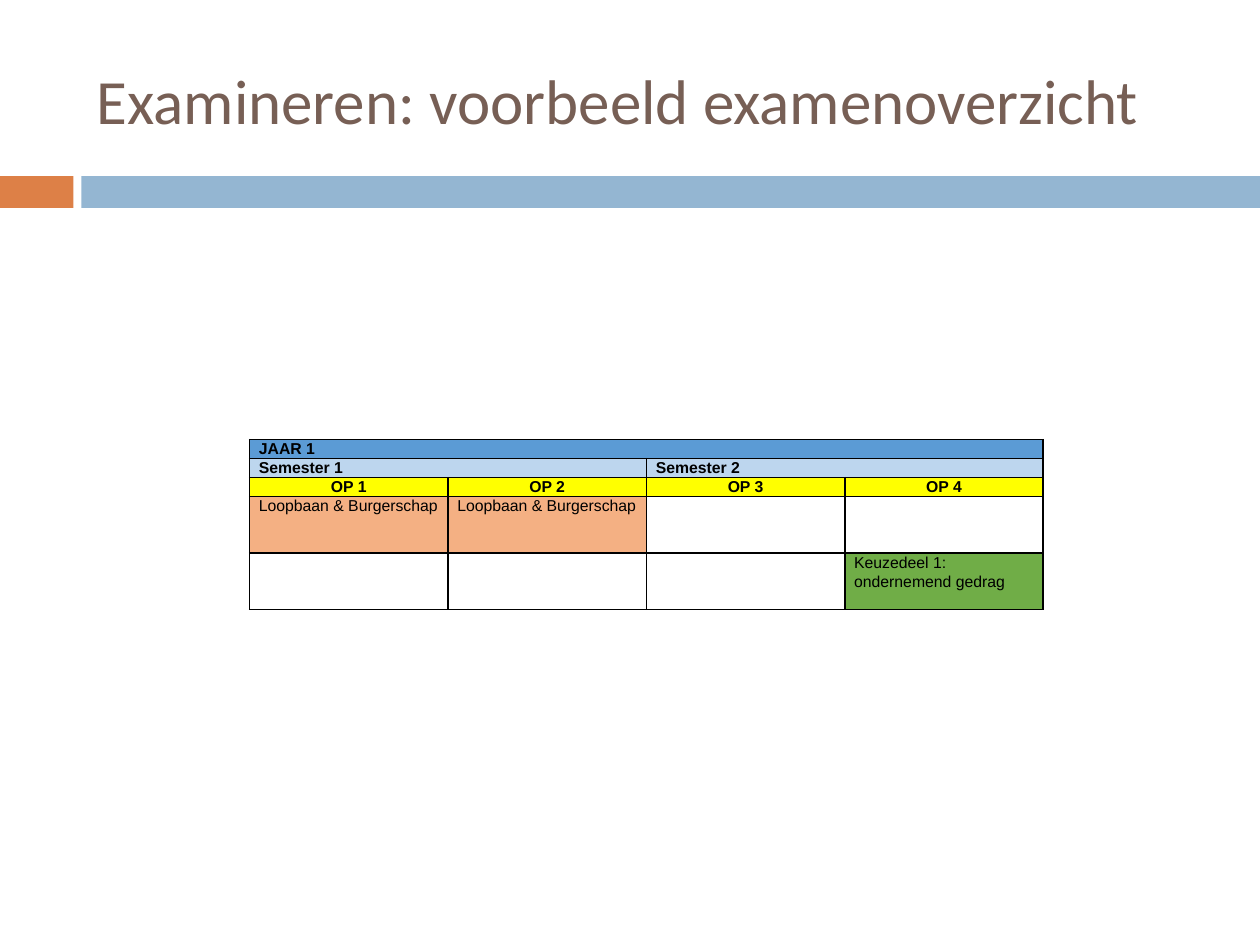
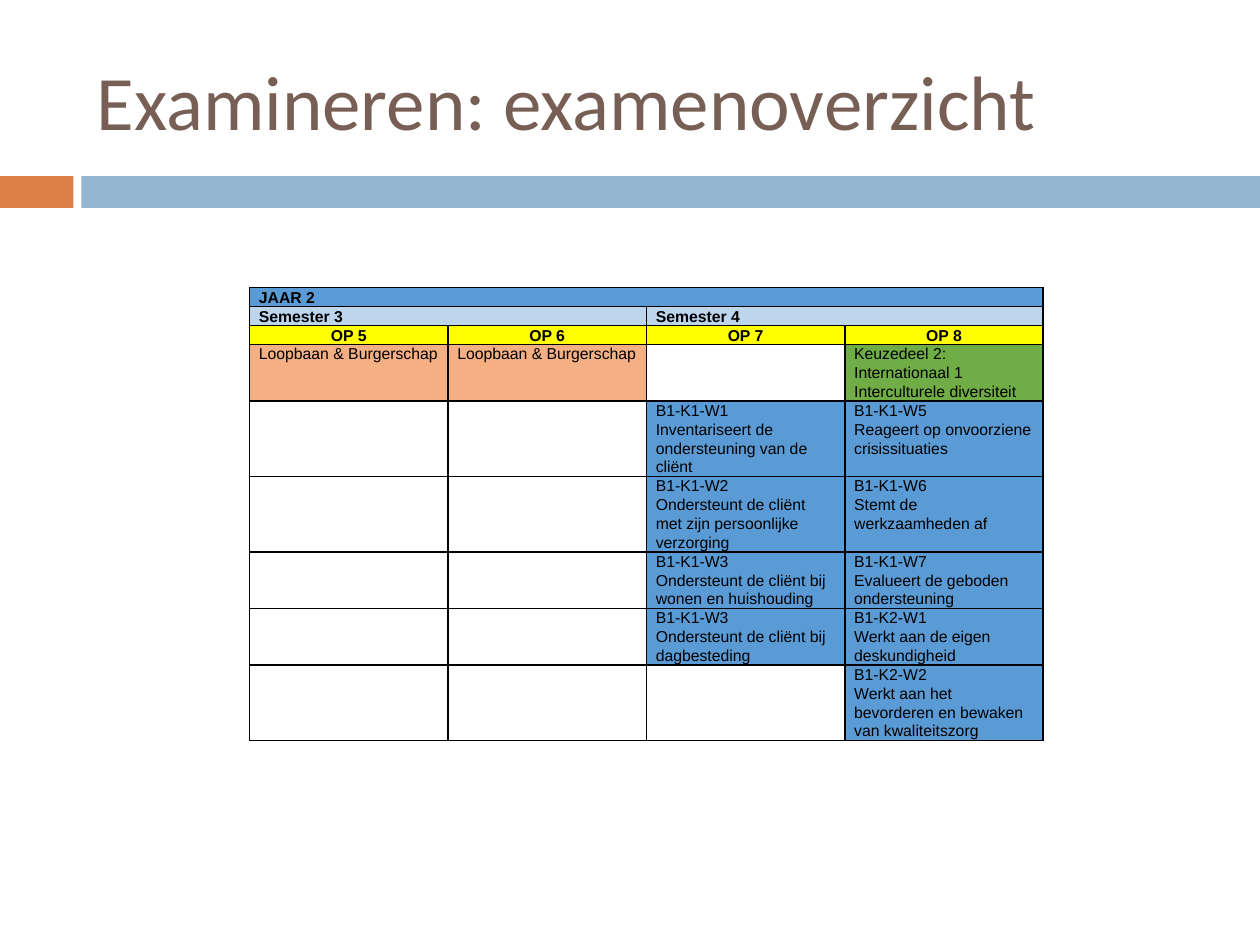
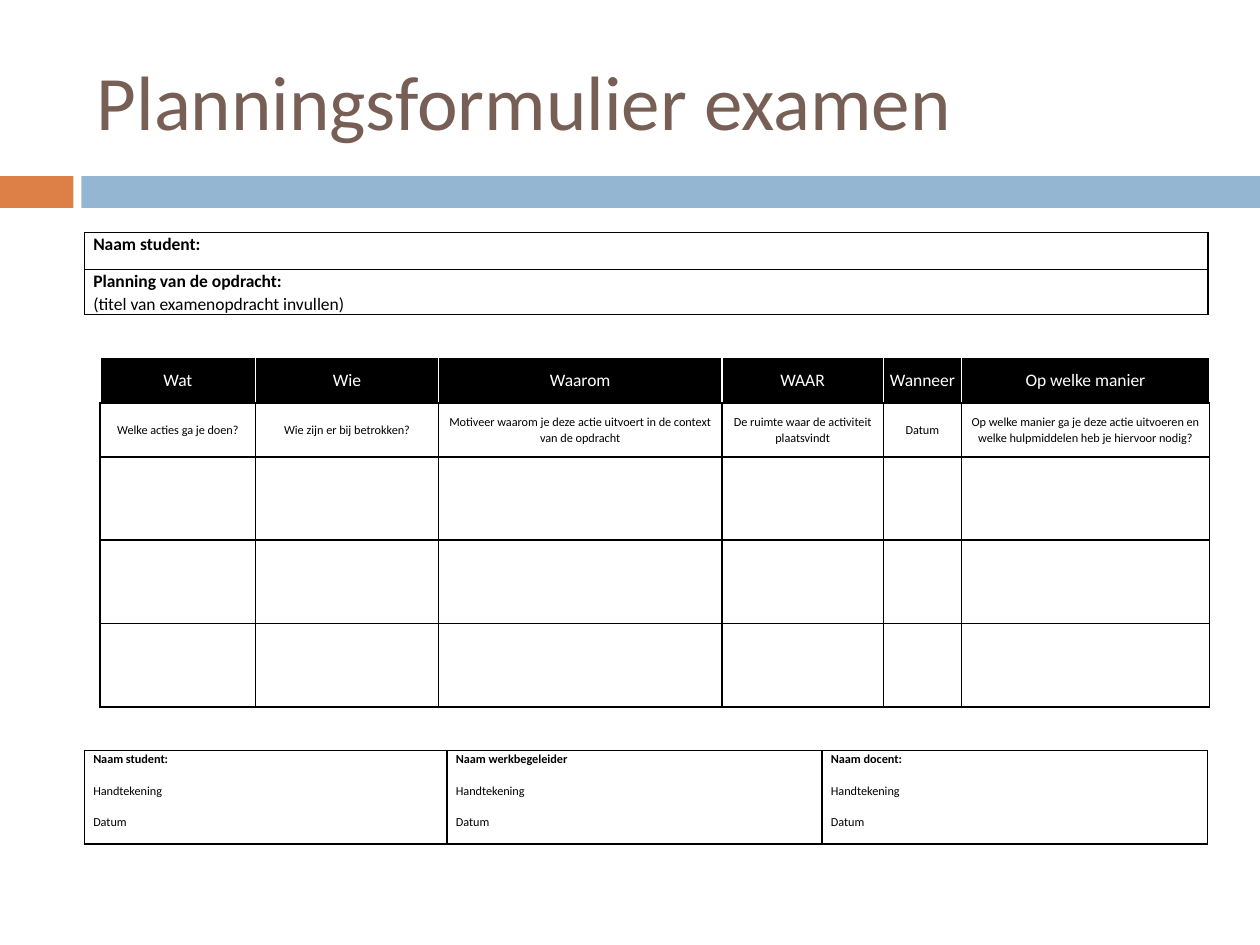
from lxml import etree
from pptx import Presentation
from pptx import util as u
from pptx.dml.color import RGBColor
from pptx.enum import shapes, text
from pptx.oxml.ns import qn

HUES = {
    "title": "775F55", "orange": "DD8047", "band": "94B6D2",
    "year": "5B9BD5", "term": "BDD6EE", "period": "FFFF00",
    "career": "F4B083", "choice": "70AD47",
    "black": "000000", "white": "FFFFFF",
}
LINE = 0.38  # height of one line of schedule text, in cm
LEFT = text.PP_ALIGN.LEFT
MID = text.PP_ALIGN.CENTER
TOP = text.MSO_ANCHOR.TOP
CORE = text.MSO_ANCHOR.MIDDLE


def hue(name):
    return RGBColor.from_string(HUES[name])


def put(obj, vals):
    for key, val in vals.items():
        setattr(obj, key, val)


# Shared parts: bands and title
def bar(slide, left, width, color):
    box = slide.shapes.add_shape(
        shapes.MSO_SHAPE.RECTANGLE, u.Cm(left), u.Cm(3.55), u.Cm(width), u.Cm(0.64))
    box.shadow.inherit = False
    box.fill.solid()
    box.fill.fore_color.rgb = hue(color)
    box.line.fill.background()


def start(deck, title, size):
    slide = deck.slides.add_slide(deck.slide_layouts[6])
    bar(slide, 0, 1.48, "orange")
    bar(slide, 1.64, 23.76, "band")
    box = slide.shapes.add_textbox(u.Cm(1.7), u.Cm(0.64), u.Cm(22.66), u.Cm(2.74))
    put(box.text_frame, {"word_wrap": True, "vertical_anchor": CORE})
    run = box.text_frame.paragraphs[0].add_run()
    run.text = title
    put(run.font, {"name": "Calibri", "size": u.Pt(size)})
    run.font.color.rgb = hue("title")
    return slide


# Table cells
def edge(cell, lines):
    """Draw the sides L, R, T, B; a side of None stays open."""
    props = cell._tc.get_or_add_tcPr()
    for side, color in zip("LRTB", lines):
        ln = etree.SubElement(props, qn("a:ln" + side), w="12700")
        if color is None:
            etree.SubElement(ln, qn("a:noFill"))
        else:
            fill = etree.SubElement(ln, qn("a:solidFill"))
            etree.SubElement(fill, qn("a:srgbClr"), val=HUES[color])


def write(cell, words, font="Calibri", size=7, ink="black", lead=False,
          align=LEFT, anchor=TOP, pad=0.18, gap=0, pitch=1.07, fill=None,
          lines=("black",) * 4):
    """Fill one cell; lead makes its first paragraph bold."""
    edge(cell, lines)
    put(cell, {"margin_left": u.Cm(pad), "margin_right": u.Cm(pad),
               "margin_top": 0, "margin_bottom": 0, "vertical_anchor": anchor})
    if fill:
        cell.fill.solid()
        cell.fill.fore_color.rgb = hue(fill)
    else:
        cell.fill.background()
    frame = cell.text_frame
    for i, part in enumerate(words.split("\n")):
        para = frame.paragraphs[0] if i == 0 else frame.add_paragraph()
        put(para, {"alignment": align, "line_spacing": pitch,
                   "space_before": u.Pt(gap if i else 0)})
        if part:
            run = para.add_run()
            run.text = part
            put(run.font, {"name": font, "size": u.Pt(size), "bold": lead and i == 0})
            run.font.color.rgb = hue(ink)
        else:
            end = etree.SubElement(para._p, qn("a:endParaRPr"), sz=str(size * 100))
            etree.SubElement(end, qn("a:latin"), typeface=font)


def grid(slide, left, top, cols, rows):
    frame = slide.shapes.add_table(
        len(rows), len(cols), u.Cm(left), u.Cm(top), u.Cm(sum(cols)), u.Cm(sum(rows)))
    table = frame.table
    put(table, {"first_row": False, "horz_banding": False})
    for col, width in zip(table.columns, cols):
        col.width = u.Cm(width)
    for row, height in zip(table.rows, rows):
        row.height = u.Cm(height)
    return table


# Exam schedule of one year
def plan(slide, left, top, year, body):
    """body holds (lines high, four cells), a cell being (text, fill) or None."""
    first = 4 * year - 3
    term = 2 * year - 1
    # Each heading row: texts, fill, alignment, columns per heading
    heads = [
        ([f"JAAR {year}", "", "", ""], "year", LEFT, 4),
        ([f"Semester {term}", "", f"Semester {term + 1}", ""], "term", LEFT, 2),
        ([f"OP {first + i}" for i in range(4)], "period", MID, 1),
    ]
    highs = [1] * len(heads) + [high for high, _ in body]
    table = grid(slide, left, top, [4] * 4, [LINE * high for high in highs])
    fmt = {"font": "Arial", "size": 9, "pad": 0.19, "pitch": u.Pt(10.75)}
    for r, (words, fill, align, span) in enumerate(heads):
        for c, word in enumerate(words):
            west = "black" if c % span == 0 else None
            east = "black" if (c + 1) % span == 0 else None
            write(table.cell(r, c), word, fill=fill, align=align, lead=True,
                  lines=(west, east, "black", "black"), **fmt)
    for r, (_, cells) in enumerate(body, len(heads)):
        for c, item in enumerate(cells):
            word, fill = item or ("", None)
            write(table.cell(r, c), word, fill=fill, **fmt)


# Planning form: name block, action table, signatures
def names(slide, left, top):
    table = grid(slide, left, top, [22.65], [0.74, 0.91])
    for r, words in enumerate([
            "Naam student:",
            "Planning van de opdracht:\n(titel van examenopdracht invullen)"]):
        write(table.cell(r, 0), words, size=10, lead=True)


def acts(slide, left, top):
    heads = [
        ("Wat", "Welke acties ga je doen?"),
        ("Wie", "Wie zijn er bij betrokken?"),
        ("Waarom", "Motiveer waarom je deze actie uitvoert in de context van de opdracht"),
        ("WAAR", "De ruimte waar de activiteit plaatsvindt"),
        ("Wanneer", "Datum"),
        ("Op welke manier", "Op welke manier ga je deze actie uitvoeren en "
                            "welke hulpmiddelen heb je hiervoor nodig?"),
    ]
    rows = [0.91, 1.09] + [1.68] * 3
    table = grid(slide, left, top, [0.32, 3.13, 3.69, 5.71, 3.26, 1.57, 5], rows)
    fmt = {"align": MID, "anchor": CORE, "pad": 0.1}
    for r in range(len(rows)):
        # Open margin column
        side = "black" if r else "white"
        write(table.cell(r, 0), "", pad=0, lines=(None, side, None, None))
        for c, pair in enumerate(heads, 1):
            cell = table.cell(r, c)
            if r == 0:
                write(cell, pair[0], size=10, ink="white", fill="black",
                      lines=("white", "white", "white", "black"), **fmt)
            else:
                write(cell, pair[1] if r == 1 else "", **fmt)


def signs(slide, left, top):
    table = grid(slide, left, top, [7.31, 7.56, 7.77], [1.88])
    for c, who in enumerate(["Naam student:", "Naam werkbegeleider", "Naam docent:"]):
        write(table.cell(0, c), who + "\nHandtekening\nDatum", lead=True, gap=9.1)


def main():
    deck = Presentation()
    put(deck, {"slide_width": u.Cm(25.4), "slide_height": u.Cm(19.05)})
    job = ("Loopbaan & Burgerschap", "career")

    def task(code, words):
        return f"B1-{code}\n{words}", "year"

    # Year 1
    slide = start(deck, "Examineren: voorbeeld examenoverzicht", 36)
    plan(slide, 5.03, 8.86, 1, [
        (3, [job, job, None, None]),
        (3, [None, None, None, ("Keuzedeel 1:\nondernemend gedrag", "choice")]),
    ])

    # Year 2
    slide = start(deck, "Examineren: examenoverzicht", 44)
    pairs = [
        (4, task("K1-W1", "Inventariseert de ondersteuning van de cliënt"),
         task("K1-W5", "Reageert op onvoorziene crisissituaties")),
        (4, task("K1-W2", "Ondersteunt de cliënt met zijn persoonlijke verzorging"),
         task("K1-W6", "Stemt de werkzaamheden af")),
        (3, task("K1-W3", "Ondersteunt de cliënt bij wonen en huishouding"),
         task("K1-W7", "Evalueert de geboden ondersteuning")),
        (3, task("K1-W3", "Ondersteunt de cliënt bij dagbesteding"),
         task("K2-W1", "Werkt aan de eigen deskundigheid")),
        (4, None,
         task("K2-W2", "Werkt aan het bevorderen en bewaken van kwaliteitszorg")),
    ]
    extra = ("Keuzedeel 2: Internationaal 1 Interculturele diversiteit", "choice")
    plan(slide, 5.03, 5.8, 2, [(3, [job, job, None, extra])] + [
        (high, [None, None, *pair]) for high, *pair in pairs])

    # Planning form
    slide = start(deck, "Planningsformulier examen", 44)
    acts(slide, 1.7, 7.21)
    signs(slide, 1.7, 15.13)
    names(slide, 1.7, 4.69)

    deck.save("out.pptx")


if __name__ == "__main__":
    main()
